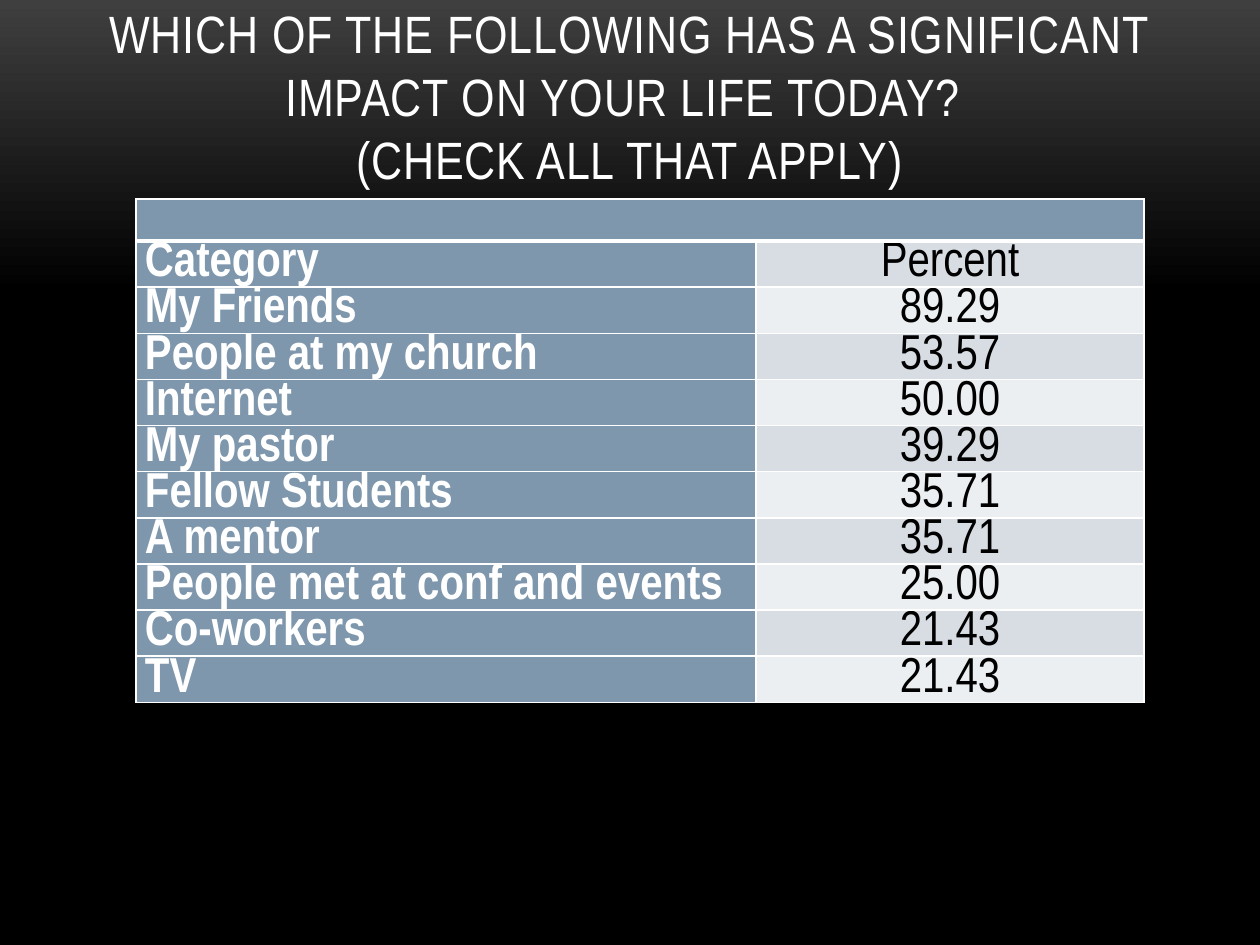
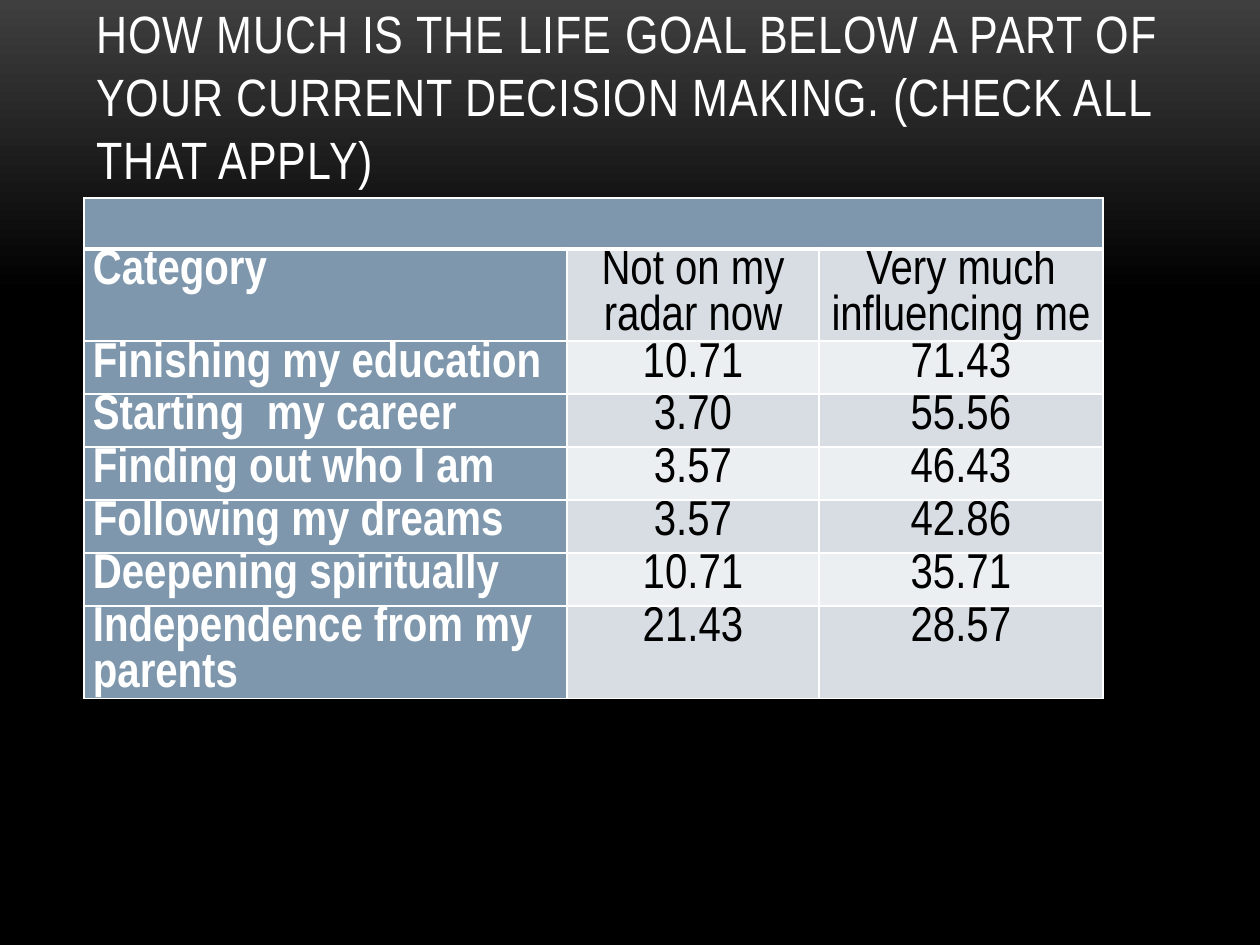
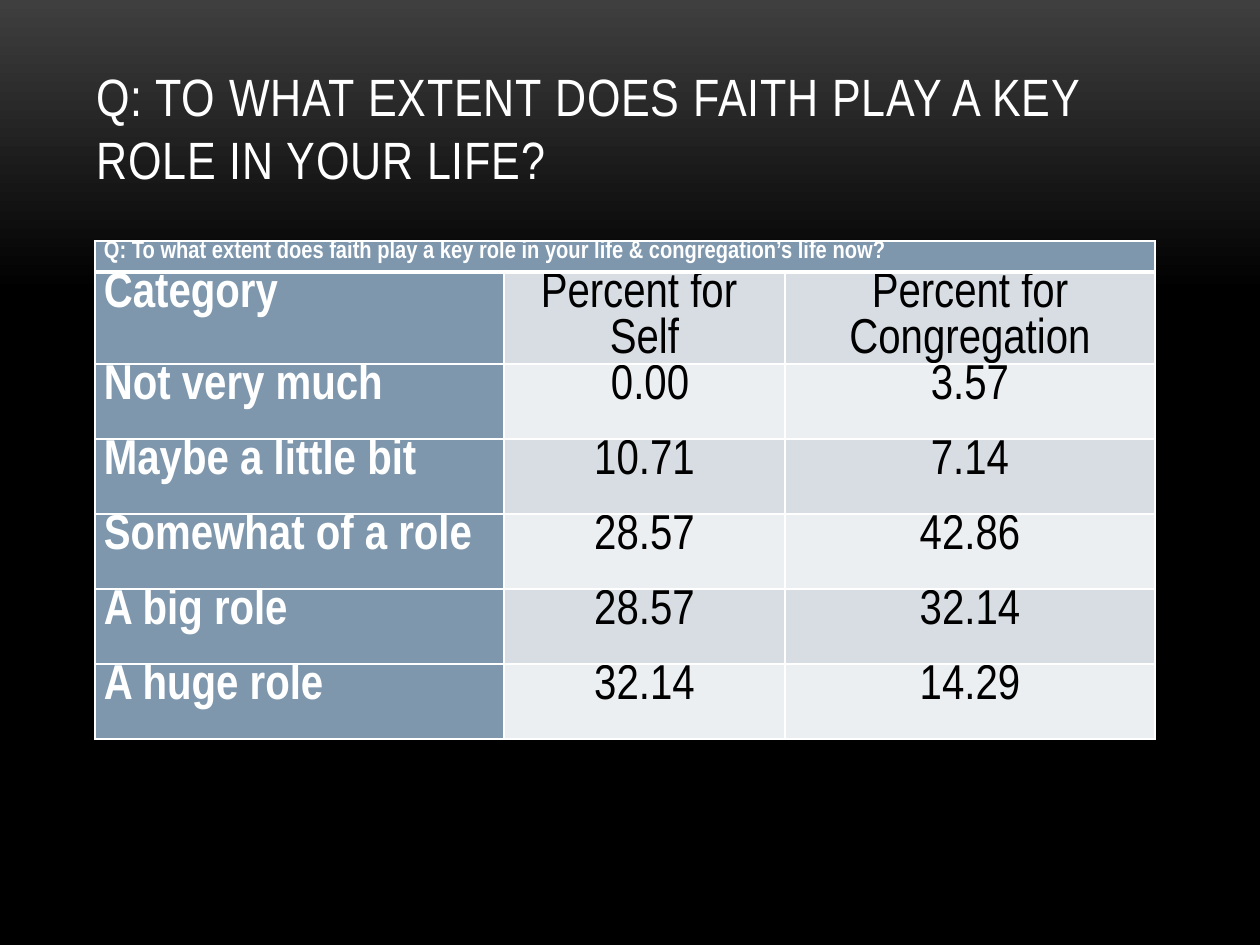
from lxml import etree
from pptx import Presentation
from pptx import util as u
from pptx.dml.color import RGBColor
from pptx.enum import text
from pptx.oxml.ns import qn

PX = u.Inches(1) // 126
FONT = "Arial Narrow"
COLORS = {
    "glow": "3F3F3F",
    "black": "000000",
    "white": "FFFFFF",
    "label": "7E97AD",
    "band_dark": "D8DDE3",
    "band_light": "ECEFF1",
}


def rgb(name):
    """Return the named colour."""
    return RGBColor.from_string(COLORS[name])


class Survey:
    """Holds the deck style and the current slide."""

    def __init__(self):
        """Start an empty deck of 10 by 7.5 inches."""
        self.presentation = Presentation()
        self.presentation.slide_width = u.Inches(10)
        self.presentation.slide_height = u.Inches(7.5)
        self.slide = None

    def add_slide(self):
        """Add a blank slide with the shared gradient."""
        self.slide = self.presentation.slides.add_slide(self.presentation.slide_layouts[6])
        fill = self.slide.background.fill
        fill.gradient()
        fill.gradient_angle = 270
        for stop, name, position in zip(fill.gradient_stops, ("glow", "black"), (0, 0.31)):
            stop.color.rgb = rgb(name)
            stop.position = position

    def set_text(self, text_frame, wording, size, color, bold, align, pitch):
        """Set wording and format its paragraphs and runs."""
        text_frame.text = wording
        for paragraph in text_frame.paragraphs:
            paragraph.alignment = align
            paragraph.line_spacing = u.Pt(size * pitch)
            for run in paragraph.runs:
                run.font.name = FONT
                run.font.size = u.Pt(size)
                run.font.bold = bold
                run.font.color.rgb = rgb(color)

    def title(self, wording, align=text.PP_ALIGN.LEFT):
        """Add the bottom-anchored slide title."""
        box = self.slide.shapes.add_textbox(84 * PX, 38 * PX, 1092 * PX, 158 * PX)
        text_frame = box.text_frame
        text_frame.word_wrap = True
        text_frame.vertical_anchor = text.MSO_ANCHOR.BOTTOM
        self.set_text(text_frame, wording, 30, "white", False, align, 1.2)
        for paragraph in text_frame.paragraphs:
            for run in paragraph.runs:
                run._r.get_or_add_rPr().set("spc", "50")

    def borders(self, cell, top, bottom):
        """Draw white cell borders, with top and bottom widths in points."""
        properties = cell._tc.get_or_add_tcPr()
        for side, width in (("L", 1), ("R", 1), ("T", top), ("B", bottom)):
            line = etree.SubElement(properties, qn(f"a:ln{side}"), w=str(u.Pt(width)))
            solid = etree.SubElement(line, qn("a:solidFill"))
            etree.SubElement(solid, qn("a:srgbClr"), val=COLORS["white"])

    def cell(self, cell, wording, row, column):
        """Style one cell by its place in the table."""
        is_label = row == 0 or column == 0
        band = "band_dark" if row % 2 else "band_light"
        self.borders(cell, 3 if row == 1 else 1, 3 if row == 0 else 1)
        cell.fill.solid()
        cell.fill.fore_color.rgb = rgb("label" if is_label else band)
        cell.margin_left = cell.margin_right = 9 * PX
        cell.margin_top = cell.margin_bottom = 0
        align = text.PP_ALIGN.LEFT if is_label else text.PP_ALIGN.CENTER
        self.set_text(cell.text_frame, wording, 14 if row == 0 else 28,
                      "white" if is_label else "black", is_label, align, 0.94)

    def table(self, left, top, widths, heights, rows, heading=""):
        """Add a results table under a merged heading row."""
        grid = [[heading] + [""] * (len(widths) - 1)] + rows
        frame = self.slide.shapes.add_table(
            len(grid), len(widths), left * PX, top * PX, sum(widths) * PX, sum(heights) * PX)
        table = frame.table
        for column, width in zip(table.columns, widths):
            column.width = width * PX
        for table_row, height in zip(table.rows, heights):
            table_row.height = height * PX
        for row, wordings in enumerate(grid):
            for column, wording in enumerate(wordings):
                self.cell(table.cell(row, column), wording, row, column)
        table.cell(0, 0).merge(table.cell(0, len(widths) - 1))


def main():
    """Build the three survey slides."""
    survey = Survey()

    survey.add_slide()
    survey.title("WHICH OF THE FOLLOWING HAS A SIGNIFICANT IMPACT ON YOUR LIFE TODAY? \v"
                 "(CHECK ALL THAT APPLY)", text.PP_ALIGN.CENTER)
    survey.table(136, 199, [620, 388], [42] + [46] * 10, [
        ["Category", "Percent"],
        ["My Friends", "89.29"],
        ["People at my church", "53.57"],
        ["Internet", "50.00"],
        ["My pastor", "39.29"],
        ["Fellow Students", "35.71"],
        ["A mentor", "35.71"],
        ["People met at conf and events", "25.00"],
        ["Co-workers", "21.43"],
        ["TV", "21.43"],
    ])

    survey.add_slide()
    survey.title("HOW MUCH IS THE LIFE GOAL BELOW A PART OF YOUR CURRENT DECISION MAKING. "
                 "(CHECK ALL THAT APPLY)")
    survey.table(84, 198, [483, 252, 284], [51, 92] + [53] * 5 + [92], [
        ["Category", "Not on my radar now", "Very much influencing me"],
        ["Finishing my education", "10.71", "71.43"],
        ["Starting  my career", "3.70", "55.56"],
        ["Finding out who I am", "3.57", "46.43"],
        ["Following my dreams", "3.57", "42.86"],
        ["Deepening spiritually", "10.71", "35.71"],
        ["Independence from my parents", "21.43", "28.57"],
    ])

    survey.add_slide()
    survey.title("Q: TO WHAT EXTENT DOES FAITH PLAY A KEY ROLE IN YOUR LIFE?")
    survey.table(95, 241, [409, 281, 370], [31, 92] + [75] * 5, [
        ["Category", "Percent for \nSelf", "Percent for Congregation"],
        ["Not very much", " 0.00", "3.57"],
        ["Maybe a little bit", "10.71", "7.14"],
        ["Somewhat of a role", "28.57", "42.86"],
        ["A big role", "28.57", "32.14"],
        ["A huge role", "32.14", "14.29"],
    ], "Q: To what extent does faith play a key role in your life & congregation’s life now?")

    survey.presentation.save("out.pptx")


if __name__ == "__main__":
    main()
